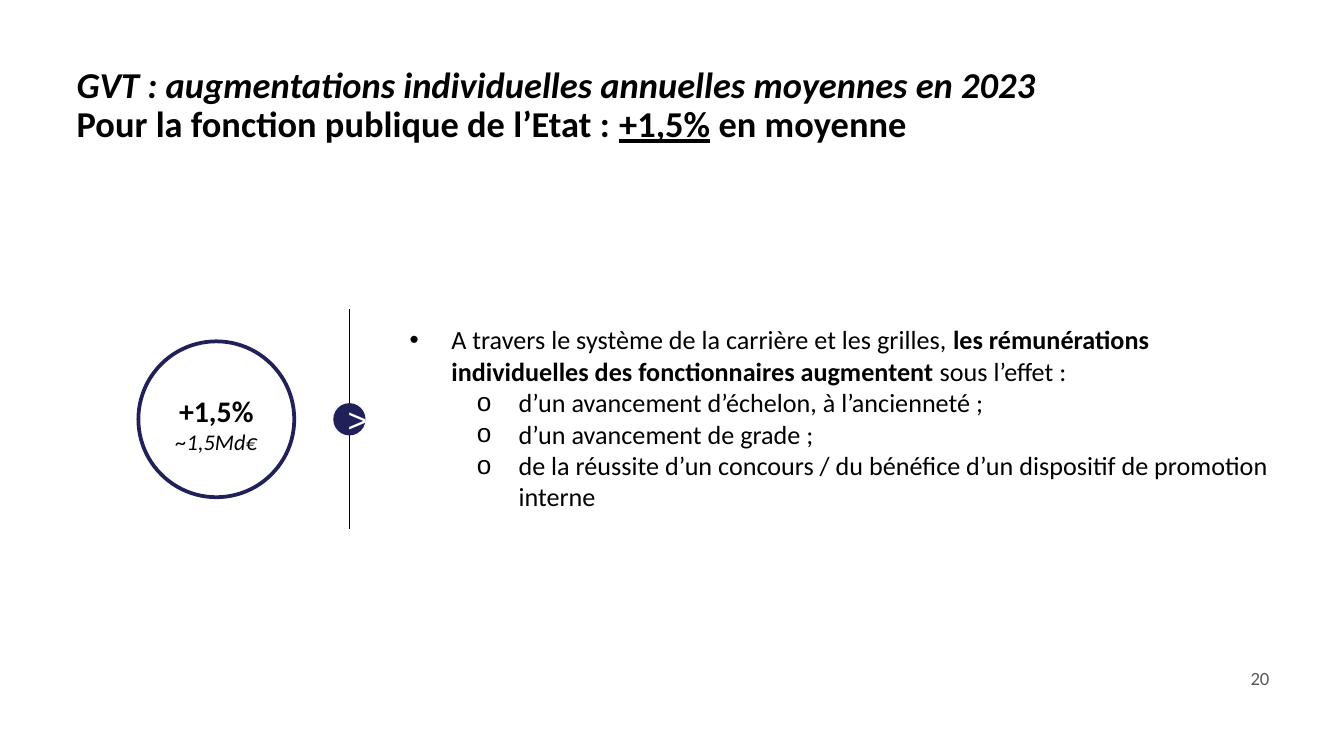
from dataclasses import dataclass

from lxml.etree import SubElement
from pptx import Presentation
from pptx.dml.color import RGBColor
from pptx.enum.shapes import MSO_CONNECTOR, MSO_SHAPE
from pptx.enum.text import MSO_ANCHOR, MSO_AUTO_SIZE, PP_ALIGN
from pptx.oxml.ns import qn
from pptx.util import Inches, Pt


@dataclass(frozen=True)
class Theme:
    """Colours, fonts and type sizes of the slide."""
    black: RGBColor = RGBColor(0x00, 0x00, 0x00)
    white: RGBColor = RGBColor(0xFF, 0xFF, 0xFF)
    navy: RGBColor = RGBColor(0x21, 0x21, 0x5A)
    grey: RGBColor = RGBColor(0x59, 0x59, 0x59)
    body_font: str = "Calibri"
    symbol_font: str = "Arial"
    title: float = 19.5
    symbol: float = 18
    figure: float = 16
    body: float = 14
    note: float = 12
    page: float = 10


THEME = Theme()
MIDDLE_Y = 3.12
DIVIDER_X = 2.6
EFFECTS = [
    "d’un avancement d’échelon, à l’ancienneté ;",
    "d’un avancement de grade ;",
    "de la réussite d’un concours / du bénéfice d’un dispositif de promotion interne",
]


def style_paragraph(paragraph, size, color=THEME.black, name=THEME.body_font,
                    bold=False, italic=False, align=PP_ALIGN.LEFT):
    """Set the font and alignment shared by a whole paragraph."""
    paragraph.alignment = align
    font = paragraph.font
    font.name, font.size, font.bold, font.italic = name, Pt(size), bold, italic
    font.color.rgb = color


def add_run(paragraph, text, **emphasis):
    """Append a run with the given font emphasis."""
    run = paragraph.add_run()
    run.text = text
    for attribute, value in emphasis.items():
        setattr(run.font, attribute, value)


def add_bullet(paragraph, character, left, level=0):
    """Give a paragraph a hanging bullet."""
    paragraph.level = level
    properties = paragraph._p.get_or_add_pPr()
    properties.set("marL", str(Inches(left)))
    properties.set("indent", str(Inches(-0.31)))
    SubElement(properties, qn("a:buFont")).set("typeface", THEME.symbol_font)
    SubElement(properties, qn("a:buChar")).set("char", character)


def add_text_box(slide, left, top, width, height):
    """Add a wrapping text box and return its text frame."""
    box = slide.shapes.add_textbox(Inches(left), Inches(top), Inches(width), Inches(height))
    box.text_frame.word_wrap = True
    return box.text_frame


def add_circle(slide, center_x, diameter, fill, line=None):
    """Add a circle centred on the middle axis."""
    shape = slide.shapes.add_shape(
        MSO_SHAPE.OVAL, Inches(center_x - diameter / 2), Inches(MIDDLE_Y - diameter / 2),
        Inches(diameter), Inches(diameter))
    shape.shadow.inherit = False
    shape.fill.solid()
    shape.fill.fore_color.rgb = fill
    if line is None:
        shape.line.fill.background()
    else:
        shape.line.color.rgb = line
        shape.line.width = Pt(2)
    return shape


def add_title(slide):
    """Fill and place the two-line title."""
    title = slide.shapes.title
    title.left, title.top = Inches(0.5), Inches(0.39)
    title.width, title.height = Inches(8.91), Inches(0.8)
    frame = title.text_frame
    frame.word_wrap = True
    frame.auto_size = MSO_AUTO_SIZE.NONE
    frame.vertical_anchor = MSO_ANCHOR.MIDDLE
    frame.margin_left = frame.margin_right = Inches(0.07)
    frame.margin_top = frame.margin_bottom = Inches(0.04)
    paragraph = frame.paragraphs[0]
    paragraph.line_spacing = 0.9
    style_paragraph(paragraph, THEME.title, bold=True)
    add_run(paragraph, "GVT : augmentations individuelles annuelles moyennes en 2023", italic=True)
    paragraph.add_line_break()
    add_run(paragraph, "Pour la fonction publique de l’Etat : ")
    add_run(paragraph, "+1,5%", underline=True)
    add_run(paragraph, " en moyenne")


def add_key_figure(slide):
    """Add the ringed rate and its amount."""
    add_circle(slide, 1.61, 1.16, THEME.white, THEME.navy)
    frame = add_text_box(slide, 0.98, 2.87, 1.26, 0.57)
    rate, amount = frame.paragraphs[0], frame.add_paragraph()
    style_paragraph(rate, THEME.figure, bold=True, align=PP_ALIGN.CENTER)
    add_run(rate, "+1,5%")
    style_paragraph(amount, THEME.note, italic=True, align=PP_ALIGN.CENTER)
    add_run(amount, "~1,5Md€")


def add_divider(slide):
    """Add the vertical rule with its round marker."""
    rule = slide.shapes.add_connector(
        MSO_CONNECTOR.STRAIGHT, Inches(DIVIDER_X), Inches(MIDDLE_Y - 0.82),
        Inches(DIVIDER_X), Inches(MIDDLE_Y + 0.82))
    rule.line.color.rgb = THEME.black
    rule.line.width = Pt(0.25)
    SubElement(rule._element.spPr, qn("a:effectLst"))
    frame = add_circle(slide, DIVIDER_X, 0.24, THEME.navy).text_frame
    frame.vertical_anchor = MSO_ANCHOR.MIDDLE
    paragraph = frame.paragraphs[0]
    style_paragraph(paragraph, THEME.symbol, THEME.white, THEME.symbol_font, align=PP_ALIGN.CENTER)
    add_run(paragraph, ">")


def add_explanation(slide):
    """Add the bulleted explanation and its sub-points."""
    frame = add_text_box(slide, 2.95, 2.36, 6.61, 1.51)
    lead = frame.paragraphs[0]
    add_bullet(lead, "•", 0.31)
    style_paragraph(lead, THEME.body)
    add_run(lead, "A travers le système de la carrière et les grilles, ")
    add_run(lead, "les rémunérations individuelles des fonctionnaires augmentent ", bold=True)
    add_run(lead, "sous l’effet :")
    for effect in EFFECTS:
        paragraph = frame.add_paragraph()
        add_bullet(paragraph, "o", 0.81, level=1)
        style_paragraph(paragraph, THEME.body)
        add_run(paragraph, effect)


def add_page_number(slide):
    """Add the page number at the bottom right."""
    paragraph = add_text_box(slide, 9.16, 4.91, 0.43, 0.27).paragraphs[0]
    style_paragraph(paragraph, THEME.page, THEME.grey, align=PP_ALIGN.CENTER)
    add_run(paragraph, "20")


def main():
    """Build and save the slide."""
    presentation = Presentation()
    presentation.slide_width = Inches(10)
    presentation.slide_height = Inches(10) * 9 // 16
    slide = presentation.slides.add_slide(presentation.slide_layouts[5])
    add_title(slide)
    add_key_figure(slide)
    add_divider(slide)
    add_explanation(slide)
    add_page_number(slide)
    presentation.save("out.pptx")


if __name__ == "__main__":
    main()
